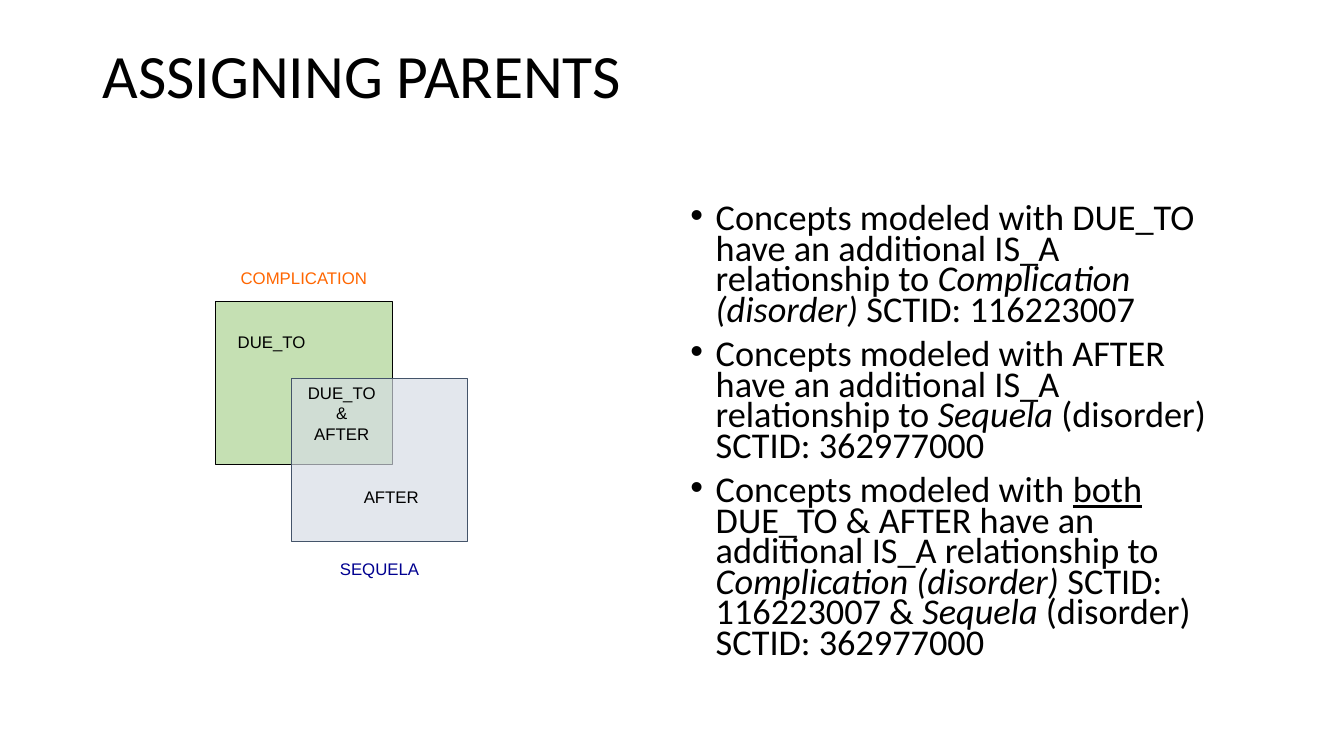
from lxml.etree import SubElement
from pptx import Presentation
from pptx.dml.color import RGBColor
from pptx.enum.shapes import MSO_SHAPE as Preset
from pptx.enum.text import PP_ALIGN as Align
from pptx.oxml.ns import qn
from pptx.util import Inches, Pt

WIDTH, HEIGHT = Inches(13.33), Inches(7.5)
COLUMN, ROW = WIDTH / 100, HEIGHT / 100

BLACK = RGBColor(0x00, 0x00, 0x00)
ORANGE = RGBColor(0xFF, 0x66, 0x00)
NAVY = RGBColor(0x00, 0x00, 0x90)
GREEN = RGBColor(0xA9, 0xD1, 0x8E)
PALE_BLUE = RGBColor(0xD6, 0xDC, 0xE5)
SLATE = RGBColor(0x44, 0x54, 0x6A)

SET_WIDTH, SET_HEIGHT = 13.13, 21.6
COMPLICATION_LEFT, COMPLICATION_TOP = 16.05, 39.87
SEQUELA_LEFT, SEQUELA_TOP = 21.68, 50

COMPLICATION = ("Complication (disorder)", "italic")
SEQUELA = ("Sequela", "italic")
RULES = [
    ["Concepts modeled with DUE_TO have an additional IS_A relationship to ",
     COMPLICATION, " SCTID: 116223007"],
    ["Concepts modeled with AFTER have an additional IS_A relationship to ",
     SEQUELA, " (disorder) SCTID: 362977000"],
    ["Concepts modeled with ", ("both", "underline"),
     " DUE_TO & AFTER have an additional IS_A relationship to ",
     COMPLICATION, " SCTID: 116223007 & ", SEQUELA,
     " (disorder) SCTID: 362977000"],
]


def place(left, top, width, height):
    return [round(length) for length in
            (left * COLUMN, top * ROW, width * COLUMN, height * ROW)]


def add_bullet(paragraph):
    properties = paragraph._p.get_or_add_pPr()
    properties.set("marL", str(Inches(0.25)))
    properties.set("indent", str(Inches(-0.25)))
    SubElement(properties, qn("a:buFont"), typeface="Arial")
    SubElement(properties, qn("a:buChar"), char="•")


def add_text(slide, box, paragraphs, size=12, font="Arial", color=BLACK,
             align=Align.LEFT, line_spacing=None, space_before=0, bullet=False):
    frame = slide.shapes.add_textbox(*place(*box)).text_frame
    frame.word_wrap = True
    for index, pieces in enumerate(paragraphs):
        paragraph = frame.add_paragraph() if index else frame.paragraphs[0]
        paragraph.alignment = align
        paragraph.line_spacing = line_spacing
        paragraph.space_before = Pt(space_before)
        if bullet:
            add_bullet(paragraph)
        for piece in pieces:
            text, style = piece if isinstance(piece, tuple) else (piece, None)
            run = paragraph.add_run()
            run.text = text
            run.font.size = Pt(size)
            run.font.name = font
            run.font.color.rgb = color
            if style:
                setattr(run.font, style, True)


def add_set(slide, left, top, fill, line):
    shape = slide.shapes.add_shape(
        Preset.RECTANGLE, *place(left, top, SET_WIDTH, SET_HEIGHT))
    shape.shadow.inherit = False
    shape.fill.solid()
    shape.fill.fore_color.rgb = fill
    color = shape.fill._xPr.find(qn("a:solidFill"))[0]
    SubElement(color, qn("a:alpha"), val="67000")
    shape.line.color.rgb = line
    shape.line.width = Pt(0.5)


def add_diagram(slide):
    add_text(slide, (COMPLICATION_LEFT, 34.8, SET_WIDTH, 6.67),
             [["COMPLICATION"]], color=ORANGE, align=Align.CENTER)
    add_set(slide, COMPLICATION_LEFT, COMPLICATION_TOP, GREEN, BLACK)
    add_set(slide, SEQUELA_LEFT, SEQUELA_TOP, PALE_BLUE, SLATE)
    add_text(slide, (16.95, 43.2, 7.5, 5.07), [["DUE_TO"]])
    add_text(slide, (SEQUELA_LEFT, SEQUELA_TOP, 7.5, 11.73),
             [["DUE_TO"], ["&"], ["AFTER"]], align=Align.CENTER)
    add_text(slide, (26.33, 63.73, 7.5, 5.07), [["AFTER"]])
    add_text(slide, (SEQUELA_LEFT, 73.2, SET_WIDTH, 6.67),
             [["SEQUELA"]], color=NAVY, align=Align.CENTER)


def main():
    presentation = Presentation()
    presentation.slide_width, presentation.slide_height = WIDTH, HEIGHT
    slide = presentation.slides.add_slide(presentation.slide_layouts[6])
    add_text(slide, (6.9, 5.33, 86.27, 19.33), [["ASSIGNING PARENTS"]],
             size=44, font="Calibri", line_spacing=0.9)
    add_text(slide, (50.64, 26.67, 42.53, 63.47), RULES, size=25.9,
             font="Calibri", line_spacing=0.7, space_before=10, bullet=True)
    add_diagram(slide)
    presentation.save("out.pptx")


if __name__ == "__main__":
    main()
